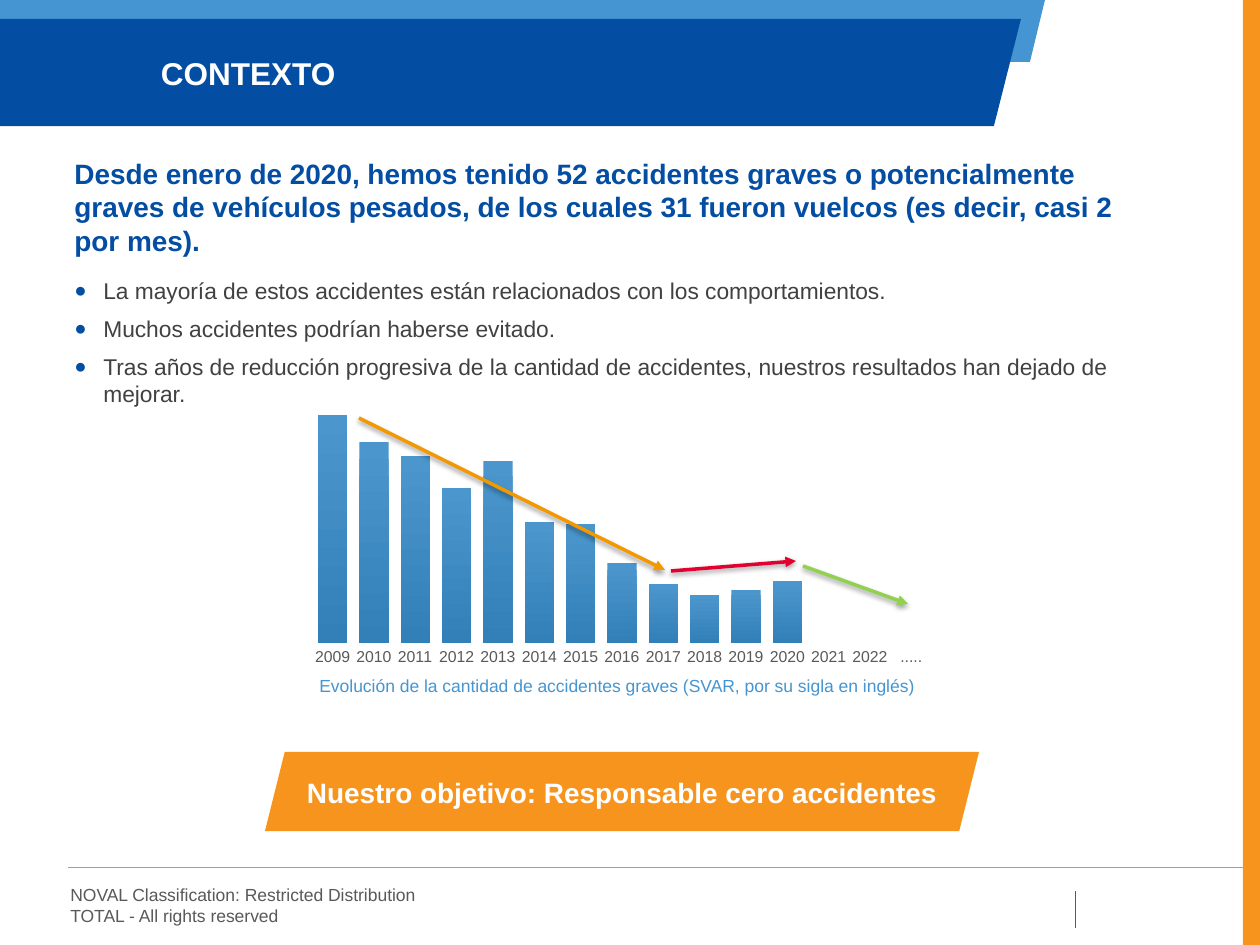
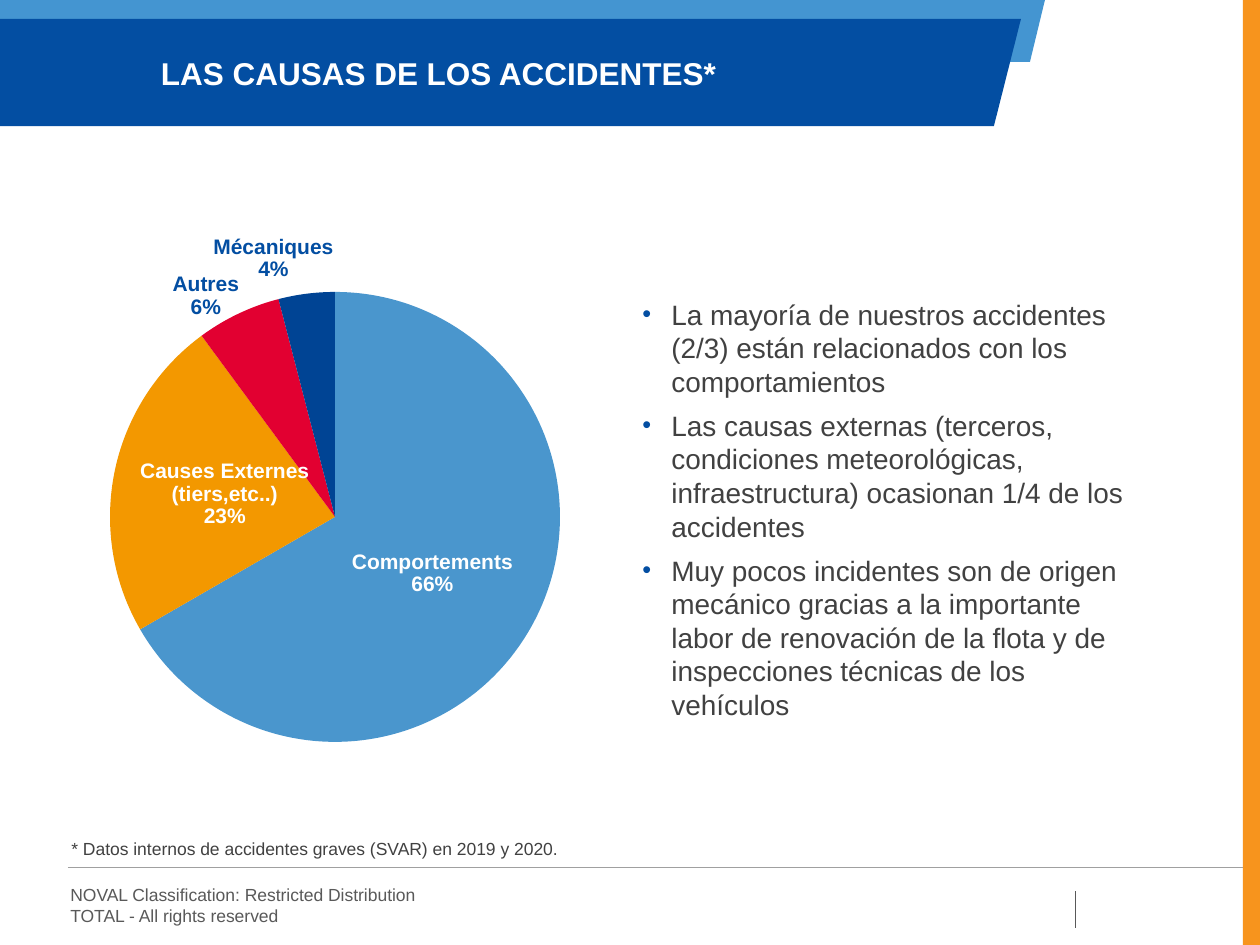
from typing import NamedTuple

from lxml.etree import SubElement as Sub
from pptx import Presentation
from pptx.chart.data import CategoryChartData as ChartData
from pptx.dml.color import RGBColor
from pptx.enum.chart import XL_CHART_TYPE as Kind
from pptx.enum.chart import XL_LABEL_POSITION as Spot
from pptx.enum.chart import XL_TICK_MARK as Tick
from pptx.enum.shapes import MSO_CONNECTOR as Link
from pptx.enum.shapes import MSO_SHAPE as Shape
from pptx.enum.text import PP_ALIGN as Align
from pptx.oxml import parse_xml
from pptx.oxml.ns import nsdecls, qn
from pptx.util import Pt

WIDE, HIGH = 1260, 945
SCALE = 914400 / 126

NAVY, SKY, ORANGE = "034EA2", "4495D1", "F7941D"
INK, GREY, RULE, WHITE = "414141", "595959", "A0A0A0", "FFFFFF"
AZURE, STEEL, AMBER, RED, GREEN, DEEP = (
    "4A96CD", "3380B8", "F39800", "E20031", "92D050", "004494")

FOOTER = ["NOVAL Classification: Restricted Distribution",
          "TOTAL - All rights reserved"]


class Box(NamedTuple):
    x: int
    y: int
    w: int
    h: int


class Style(NamedTuple):
    size: float
    color: str
    bold: bool = False
    align: Align = Align.LEFT
    bullet: str = ""
    inset: bool = True


class Arrow(NamedTuple):
    start: tuple[int, int]
    end: tuple[int, int]
    color: str


class Slice(NamedTuple):
    name: str
    value: int
    fill: str
    ink: str
    spot: Spot
    shift: tuple[int, int] = (0, 0)


TITLE = Style(18, WHITE, True, inset=False)
LEAD = Style(16, NAVY, True)
SMALL = Style(10, GREY)

ARROWS = [
    Arrow((359, 418), (665, 570), AMBER),
    Arrow((671, 571), (796, 561), RED),
    Arrow((803, 566), (908, 604), GREEN),
]
YEARS = [str(year) for year in range(2009, 2023)] + ["....."]
COUNTS = [100, 88, 82, 68, 80, 53, 52, 35, 26, 21, 23, 27, None, None, None]
CAUSES = [
    Slice("Comportements", 66, AZURE, WHITE, Spot.CENTER),
    Slice("Causes Externes (tiers,etc..)", 23, AMBER, WHITE, Spot.CENTER),
    Slice("Autres", 6, RED, NAVY, Spot.OUTSIDE_END, (4, 11)),
    Slice("Mécaniques", 4, DEEP, NAVY, Spot.OUTSIDE_END, (28, -6)),
]


def px(*vals: float) -> list[int]:
    """Turn px lengths into EMU."""
    return [round(val * SCALE) for val in vals]


def rgb(code: str) -> RGBColor:
    return RGBColor.from_string(code)


def apply(thing, **vals) -> None:
    for key, val in vals.items():
        setattr(thing, key, val)


def set_font(font, size: float, color: str, bold: bool = False) -> None:
    apply(font, name="Arial", size=Pt(size), bold=bold)
    font.color.rgb = rgb(color)


def paint(shape, color: str) -> None:
    shape.shadow.inherit = False
    shape.fill.solid()
    shape.fill.fore_color.rgb = rgb(color)
    shape.line.fill.background()


def add_block(slide, kind: Shape, box: Box, color: str) -> None:
    paint(slide.shapes.add_shape(kind, *px(*box)), color)


def add_band(slide, points: list[tuple[int, int]], color: str) -> None:
    first, *rest = [tuple(px(*point)) for point in points]
    path = slide.shapes.build_freeform(*first, scale=1.0)
    path.add_line_segments(rest, close=True)
    paint(path.convert_to_shape(), color)


def add_line(slide, start, end, color: str, width: float):
    """Draw a straight line and return it with its empty effect list."""
    line = slide.shapes.add_connector(Link.STRAIGHT, *px(*start, *end))
    line.line.color.rgb = rgb(color)
    line.line.width = Pt(width)
    return line, Sub(line._element.spPr, qn("a:effectLst"))


def add_arrow(slide, arrow: Arrow) -> None:
    line, effects = add_line(slide, *arrow, 2)
    Sub(line.line._get_or_add_ln(), qn("a:tailEnd"), type="triangle")
    shade = Sub(effects, qn("a:outerShdw"), blurRad="39400", dist="20300",
                dir="5400000", rotWithShape="0")
    black = Sub(shade, qn("a:srgbClr"), val="000000")
    Sub(black, qn("a:alpha"), val="38000")


def add_bullet(para, mark: str) -> None:
    props = para._p.get_or_add_pPr()
    indent = px(29)[0]
    props.set("marL", str(indent))
    props.set("indent", str(-indent))
    Sub(Sub(props, qn("a:buClr")), qn("a:srgbClr"), val=NAVY)
    Sub(props, qn("a:buSzPct"), val="90000")
    Sub(props, qn("a:buFont"), typeface="Arial")
    Sub(props, qn("a:buChar"), char=mark)


def add_text(slide, box: Box, lines: list[str], style: Style) -> None:
    frame = slide.shapes.add_textbox(*px(*box)).text_frame
    frame.word_wrap = True
    if not style.inset:
        apply(frame, margin_left=0, margin_top=0,
              margin_right=0, margin_bottom=0)
    for at, line in enumerate(lines):
        para = frame.add_paragraph() if at else frame.paragraphs[0]
        if style.bullet:
            add_bullet(para, style.bullet)
        gap = Pt(3 if style.bullet else 0)
        apply(para, alignment=style.align,
              space_before=gap if at else Pt(0), space_after=gap)
        run = para.add_run()
        run.text = line
        set_font(run.font, style.size, style.color, style.bold)


def make_layout(parts: dict[str, float], head: str = ""):
    sizes = "".join(f'<c:{key} val="{val:.4f}"/>'
                    for key, val in parts.items())
    return parse_xml(f'<c:layout {nsdecls("c")}><c:manualLayout>'
                     f'{head}{sizes}</c:manualLayout></c:layout>')


def add_chart(slide, kind: Kind, box: Box, plot: Box, names, vals):
    """Add a one-series chart whose inner plot area fills the plot box."""
    data = ChartData()
    data.categories = names
    data.add_series("Series 1", vals)
    chart = slide.shapes.add_chart(kind, *px(*box), data).chart
    apply(chart, has_title=False, has_legend=False)
    set_font(chart.font, 10, "000000")
    area = chart._chartSpace.chart.plotArea
    for old in area.findall(qn("c:layout")):
        area.remove(old)
    parts = {"x": (plot.x - box.x) / box.w, "y": (plot.y - box.y) / box.h,
             "w": plot.w / box.w, "h": plot.h / box.h}
    modes = "".join(f'<c:{key}Mode val="edge"/>' for key in "xy")
    area.insert(0, make_layout(
        parts, f'<c:layoutTarget val="inner"/>{modes}'))
    return chart


def add_columns(slide) -> None:
    chart = add_chart(slide, Kind.COLUMN_CLUSTERED, Box(299, 396, 645, 277),
                      Box(312, 415, 620, 228), YEARS, COUNTS)
    axis = chart.value_axis
    apply(axis, visible=False, has_major_gridlines=False,
          minimum_scale=0, maximum_scale=100)
    axis = chart.category_axis
    apply(axis, major_tick_mark=Tick.NONE, has_major_gridlines=False)
    axis.format.line.fill.background()
    set_font(axis.tick_labels.font, 9, GREY)
    plot = chart.plots[0]
    apply(plot, gap_width=41, vary_by_categories=False)
    fill = plot.series[0].format.fill
    fill.gradient()
    fill.gradient_angle = 270
    for stop, color in zip(fill.gradient_stops, (AZURE, STEEL)):
        stop.color.rgb = rgb(color)


def add_pie(slide) -> None:
    box = Box(10, 217, 1000, 600)
    chart = add_chart(slide, Kind.PIE, box, Box(110, 292, 450, 450),
                      [cause.name for cause in CAUSES],
                      [cause.value for cause in CAUSES])
    series = chart.plots[0].series[0]
    for at, cause in enumerate(CAUSES):
        point = series.points[at]
        point.format.fill.solid()
        point.format.fill.fore_color.rgb = rgb(cause.fill)
        label = point.data_label
        set_font(label.font, 12, cause.ink, True)
        label.position = cause.spot
    marks = series._element.iter(qn("c:dLbl"))
    for mark, cause in zip(marks, CAUSES):
        mark.find(qn("c:showCatName")).set("val", "1")
        Sub(mark, qn("c:separator")).text = "\n"
        form = parse_xml(f'<c:numFmt {nsdecls("c")} sourceLinked="0"/>')
        form.set("formatCode", '0"%"')
        mark.insert(1, form)
        if any(cause.shift):
            right, down = cause.shift
            mark.insert(1, make_layout({"x": right / box.w,
                                        "y": down / box.h}))
    for lines in series._element.iter(qn("c:showLeaderLines")):
        lines.set("val", "0")


def add_page(deck, title: str):
    """Add a slide with the shared bands, footer and title."""
    slide = deck.slides.add_slide(deck.slide_layouts[6])
    add_block(slide, Shape.RECTANGLE, Box(1243, 0, 17, HIGH), ORANGE)
    add_line(slide, (68, 867), (1243, 867), RULE, 0.5)
    add_line(slide, (1075, 928), (1075, 891), GREY, 0.5)
    add_text(slide, Box(58, 878, 679, 56), FOOTER, SMALL)
    add_band(slide, [(0, 0), (1045, 0), (1030, 62), (0, 62)], SKY)
    add_band(slide, [(0, 19), (1021, 19), (994, 126), (0, 126)], NAVY)
    add_text(slide, Box(161, 54, 756, 38), [title], TITLE)
    return slide


def add_context(deck) -> None:
    slide = add_page(deck, "CONTEXTO")
    add_text(slide, Box(62, 150, 1113, 115), [
        "Desde enero de 2020, hemos tenido 52 accidentes graves o "
        "potencialmente graves de vehículos pesados, de los cuales 31 "
        "fueron vuelcos (es decir, casi 2 por mes)."], LEAD)
    add_text(slide, Box(62, 271, 1120, 139), [
        "La mayoría de estos accidentes están relacionados con los "
        "comportamientos.",
        "Muchos accidentes podrían haberse evitado.",
        "Tras años de reducción progresiva de la cantidad de accidentes, "
        "nuestros resultados han dejado de mejorar.",
    ], Style(13, INK, bullet="●"))
    add_text(slide, Box(307, 669, 716, 34), [
        "Evolución de la cantidad de accidentes graves (SVAR, por su sigla "
        "en inglés)"], SMALL._replace(color=SKY))
    goal = Box(265, 752, 714, 79)
    add_block(slide, Shape.PARALLELOGRAM, goal, ORANGE)
    add_text(slide, goal._replace(y=769, h=47),
             ["Nuestro objetivo: Responsable cero accidentes"],
             LEAD._replace(color=WHITE, align=Align.CENTER))
    add_columns(slide)
    for arrow in ARROWS:
        add_arrow(slide, arrow)


def add_causes(deck) -> None:
    slide = add_page(deck, "LAS CAUSAS DE LOS ACCIDENTES*")
    add_pie(slide)
    add_text(slide, Box(630, 291, 519, 363), [
        "La mayoría de nuestros accidentes (2/3) están relacionados con los "
        "comportamientos",
        "Las causas externas (terceros, condiciones meteorológicas, "
        "infraestructura) ocasionan 1/4 de los accidentes",
        "Muy pocos incidentes son de origen mecánico gracias a la "
        "importante labor de renovación de la flota y de inspecciones "
        "técnicas de los vehículos",
    ], Style(16, INK, bullet="•"))
    add_text(slide, Box(59, 832, 698, 34), [
        "* Datos internos de accidentes graves (SVAR) en 2019 y 2020."],
        SMALL._replace(color=INK))


def main() -> None:
    deck = Presentation()
    deck.slide_width, deck.slide_height = px(WIDE, HIGH)
    add_context(deck)
    add_causes(deck)
    deck.save("out.pptx")


if __name__ == "__main__":
    main()
